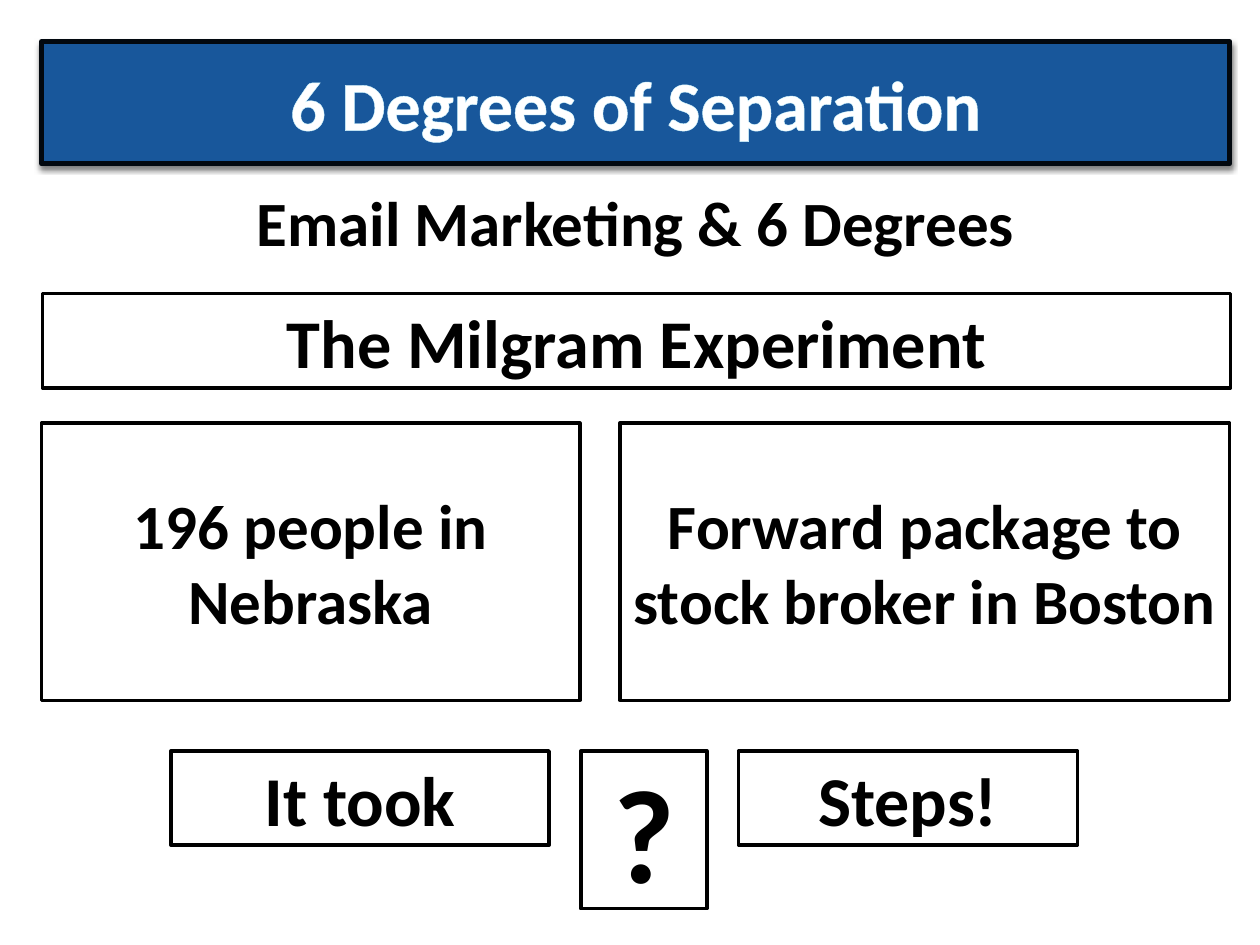
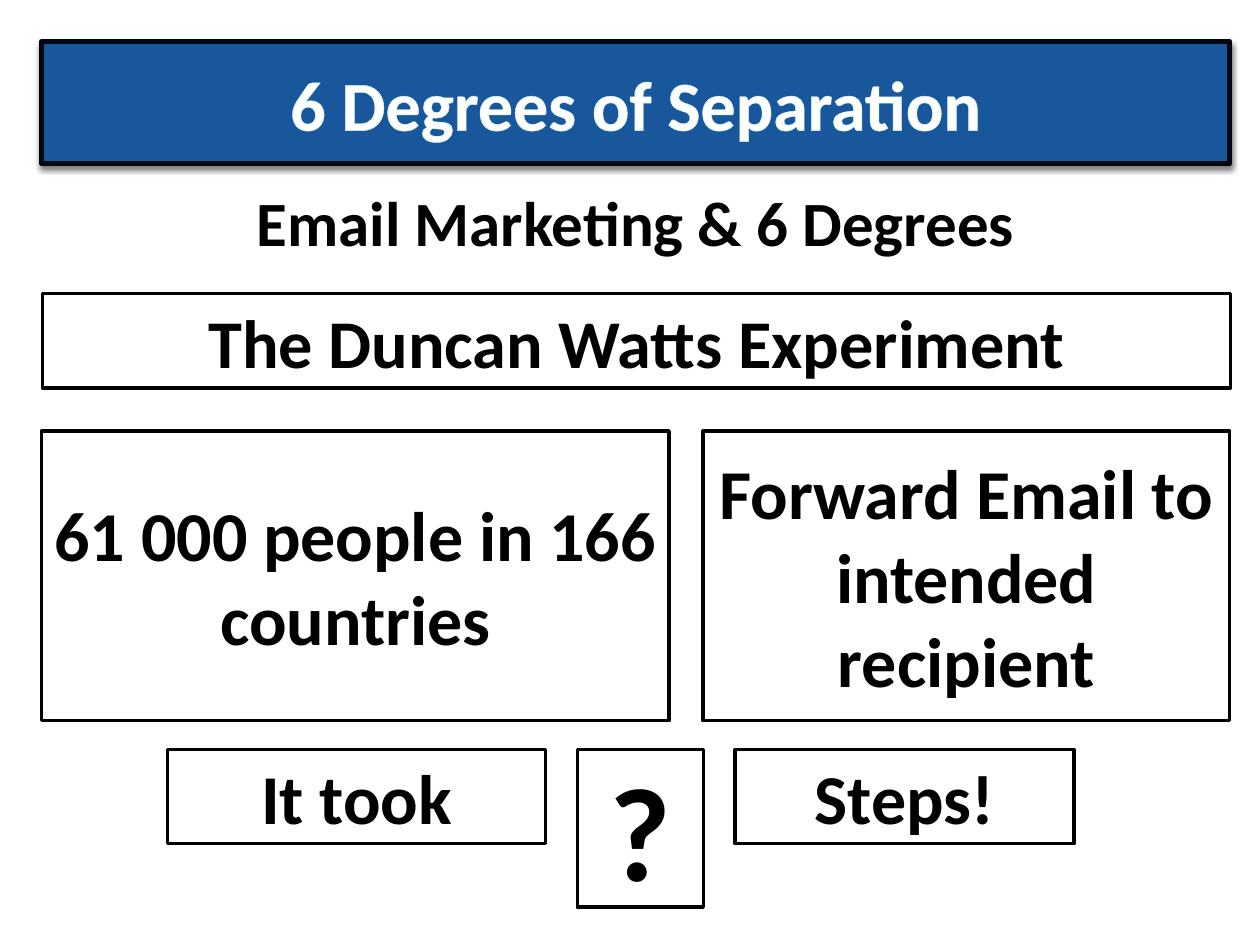
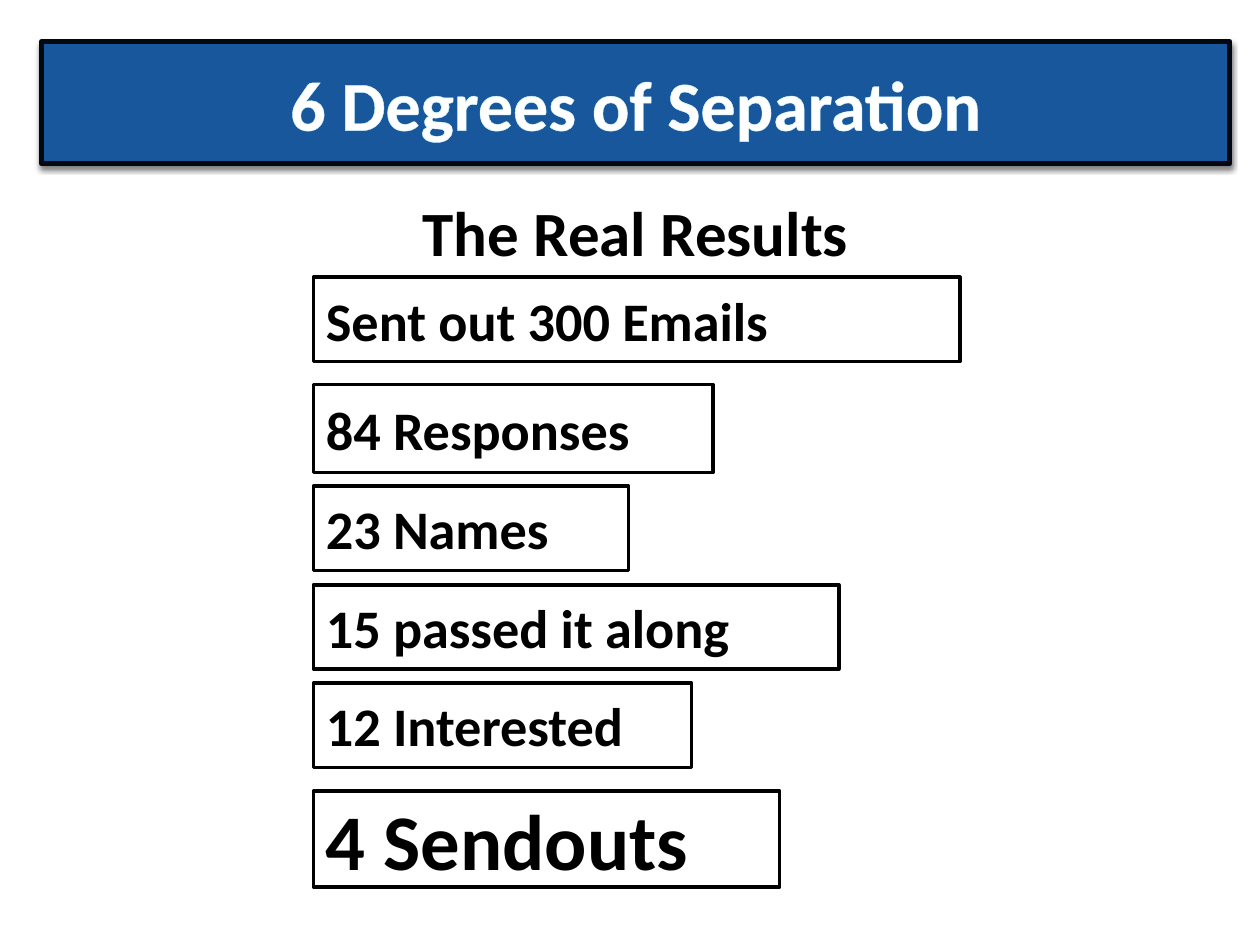
import pptx
import pptx.dml.color
import pptx.enum.shapes
import pptx.enum.text
import pptx.oxml
import pptx.oxml.ns
import pptx.util

Cm = pptx.util.Cm
Pt = pptx.util.Pt
Align = pptx.enum.text.PP_ALIGN

# Shared look
FONT = "Calibri"
BLUE, NAVY, GLOW = "18579B", "02080F", "CCF2FD"
BLACK, WHITE = "000000", "FFFFFF"
LEFT, WIDE = 0.84, 23.95
RIGHT = LEFT + WIDE
ROW = 1.9


def paint(form, color):
    """Give a fill or font colour its hex value."""
    form.rgb = pptx.dml.color.RGBColor.from_string(color)


def add_xml(parent, text, index=None):
    node = pptx.oxml.parse_xml(
        text.replace(">", " " + pptx.oxml.ns.nsdecls("a") + ">", 1))
    parent.insert(len(parent) if index is None else index, node)


def add_box(slide, text, left, top, width, height, size,
            fill=WHITE, line=BLACK, ink=BLACK, weight=2, align=Align.CENTER):
    """Draw a framed box with bold text in its middle."""
    box = slide.shapes.add_shape(
        pptx.enum.shapes.MSO_SHAPE.RECTANGLE,
        Cm(left), Cm(top), Cm(width), Cm(height))
    box.fill.solid()
    paint(box.fill.fore_color, fill)
    paint(box.line.color, line)
    box.line.width = Pt(weight)
    box.shadow.inherit = False

    frame = box.text_frame
    frame.word_wrap = True
    frame.vertical_anchor = pptx.enum.text.MSO_ANCHOR.MIDDLE
    frame.text = text
    para = frame.paragraphs[0]
    para.alignment = align
    font = para.runs[0].font
    font.name, font.size, font.bold = FONT, Pt(size), True
    paint(font.color, ink)
    return box


def add_title(slide):
    """Blue band with a soft shadow and outlined letters."""
    band = add_box(slide, "6 Degrees of Separation", LEFT, 0.84, WIDE, 2.46,
                   40, fill=BLUE, line=NAVY, ink=WHITE, weight=3)
    glow = band.text_frame.paragraphs[0].runs[0]._r.get_or_add_rPr()
    add_xml(glow, f'<a:ln w="{Pt(1)}"><a:solidFill><a:srgbClr val="{GLOW}"/>'
                  '</a:solidFill></a:ln>', 0)
    shade = band._element.spPr.find(pptx.oxml.ns.qn("a:effectLst"))
    add_xml(shade, '<a:outerShdw '
                   f'blurRad="{Pt(3)}" dist="{Pt(2)}" dir="5400000" '
                   f'rotWithShape="0"><a:srgbClr val="{BLACK}">'
                   '<a:alpha val="50000"/></a:srgbClr></a:outerShdw>')


def add_lead(slide, text, top):
    """Frameless line under the title."""
    add_box(slide, text, LEFT, top, WIDE, 1.7, 36, line=WHITE)


def add_pair(slide, texts, top, height, width, start, size):
    """Two boxes that span the title's width."""
    add_box(slide, texts[0], LEFT, top, width, height, size)
    add_box(slide, texts[1], start, top, RIGHT - start, height, size)


def add_steps(slide, left, top):
    """Row of boxes that asks for the number of steps."""
    for text, width, height, size in (("It took", 7.62, ROW, 40),
                                      ("?", 2.54, 3.18, 76),
                                      ("Steps!", 6.83, ROW, 40)):
        add_box(slide, text, left, top, width, height, size)
        left += width + 0.64


def add_slide(deck):
    slide = deck.slides.add_slide(deck.slide_layouts[6])
    add_title(slide)
    return slide


def add_trial(deck, name, pair, steps):
    """Slide for one experiment."""
    slide = add_slide(deck)
    add_box(slide, name, 0.86, 5.92, WIDE, ROW, 39)
    add_lead(slide, "Email Marketing & 6 Degrees", 3.61)
    add_pair(slide, *pair)
    add_steps(slide, *steps)


def add_results(deck):
    """Slide with the results listed from top to bottom."""
    slide = add_slide(deck)
    add_lead(slide, "The Real Results", 3.81)
    for text, top, width, height, size in (
            ("Sent out 300 Emails", 5.59, 13.03, 1.7, 31),
            ("84 Responses", 7.75, 8.05, 1.78, 31),
            ("23 Names", 9.8, 6.35, 1.7, 31),
            ("15 passed it along", 11.79, 10.59, 1.7, 31),
            ("12 Interested", 13.77, 7.62, 1.7, 31),
            ("4 Sendouts", 15.95, 9.4, 1.93, 45)):
        add_box(slide, text, 6.32, top, width, height, size, align=Align.LEFT)


def main():
    deck = pptx.Presentation()
    deck.slide_width, deck.slide_height = Cm(25.4), Cm(19.05)

    add_trial(deck, "The Milgram Experiment",
              (("196 people in Nebraska",
                "Forward package to stock broker in Boston"),
               8.53, 5.59, 10.85, 12.5, 36),
              (3.45, 15.14))
    add_trial(deck, "The Duncan Watts Experiment",
              (("61 000 people in 166 countries",
                "Forward Email to intended recipient"),
               8.69, 5.84, 12.65, 14.17, 40),
              (3.38, 15.11))
    add_results(deck)
    deck.save("out.pptx")


if __name__ == "__main__":
    main()
